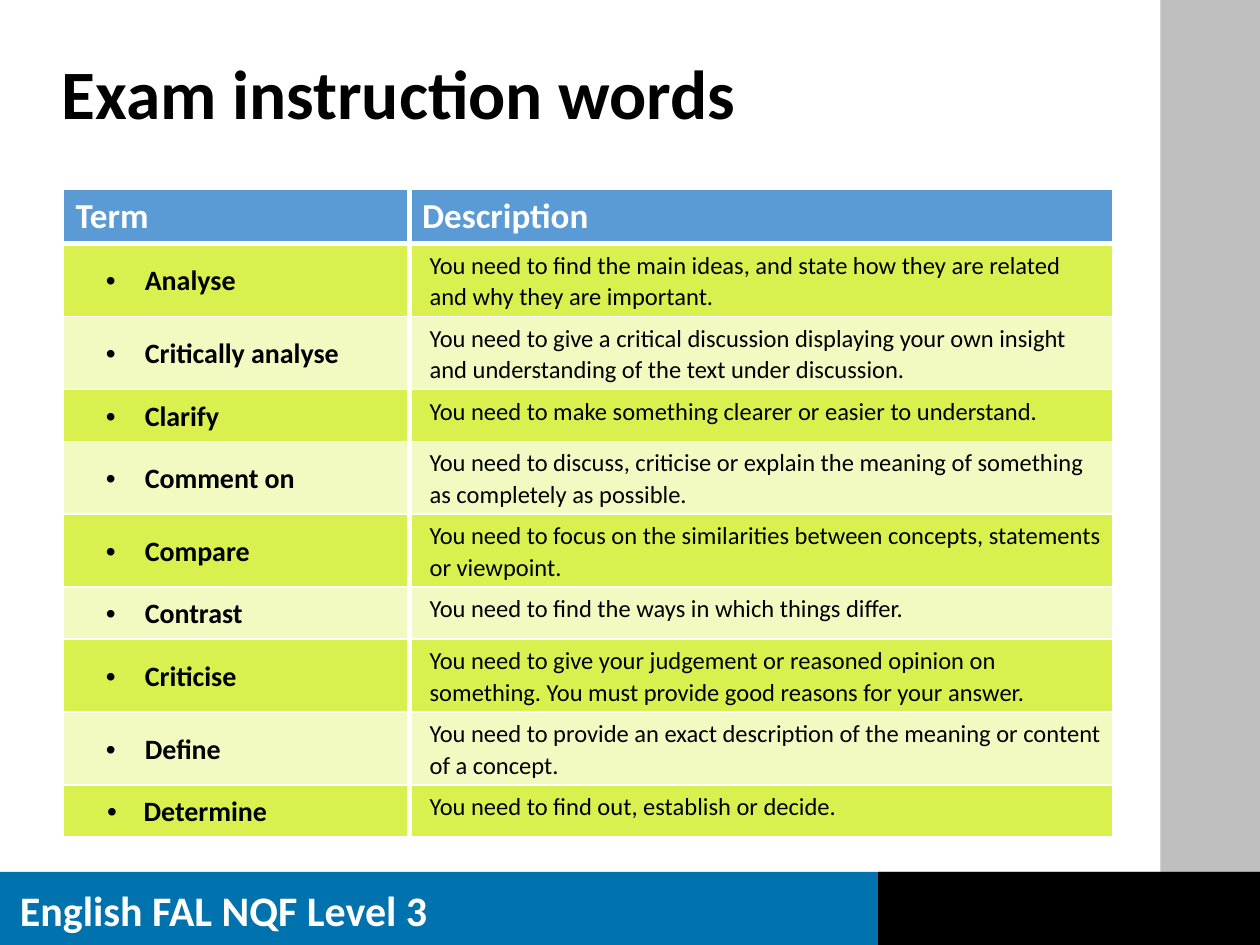
from lxml.etree import SubElement
from pptx import Presentation
from pptx.dml.color import RGBColor
from pptx.enum.shapes import MSO_SHAPE as Shape
from pptx.enum.text import MSO_ANCHOR as Anchor
from pptx.oxml.ns import qn
from pptx.util import Inches, Pt

FONT = "Calibri"
BLACK = RGBColor(0x00, 0x00, 0x00)
WHITE = RGBColor(0xFF, 0xFF, 0xFF)
GRAY = RGBColor(0xBF, 0xBF, 0xBF)
FOOTER_BLUE = RGBColor(0x00, 0x72, 0xAE)
HEADER_BLUE = RGBColor(0x5B, 0x9B, 0xD5)
LIME = RGBColor(0xDA, 0xF0, 0x4F)
PALE_LIME = RGBColor(0xF2, 0xFA, 0xC2)

TITLE = "Exam instruction words"
FOOTER = "English FAL NQF Level 3"
HEADERS = ("Term", "Description")
TERMS = [
    ("Analyse", "You need to find the main ideas, and state how they are related and why they are important."),
    ("Critically analyse", "You need to give a critical discussion displaying your own insight and understanding of the text under discussion."),
    ("Clarify", "You need to make something clearer or easier to understand."),
    ("Comment on", "You need to discuss, criticise or explain the meaning of something as completely as possible."),
    ("Compare", "You need to focus on the similarities between concepts, statements or viewpoint."),
    ("Contrast", "You need to find the ways in which things differ."),
    ("Criticise", "You need to give your judgement or reasoned opinion on something. You must provide good reasons for your answer."),
    ("Define", "You need to provide an exact description of the meaning or content of a concept."),
    ("Determine", "You need to find out, establish or decide."),
]
PANELS = [
    ((9.21, 0, 0.79, 7.49), GRAY),
    ((0, 6.92, 10, 0.58), FOOTER_BLUE),
    ((6.97, 6.92, 3.03, 0.58), BLACK),
]
COLUMN_WIDTHS = (2.75, 5.58)
HEADER_HEIGHT, ROW_HEIGHT = 0.24, 0.41
CELL_MARGINS = (0.1, 0.05, 0.1, 0.05)
TERM_MARGINS = (0.07, 0, 0.07, 0)
DESCRIPTION_MARGINS = (0.16, 0.04, 0.08, 0.04)
LAST_MARGINS = (0.16, 0.04, 0, 0.04)


def set_font(paragraph, size, color, bold):
    font = paragraph.font
    font.name, font.size, font.bold = FONT, Pt(size), bold
    font.color.rgb = color


def add_text(slide, box, text, size, color, margins):
    frame = slide.shapes.add_textbox(*map(Inches, box)).text_frame
    frame.word_wrap = True
    frame.margin_left, frame.margin_top = map(Inches, margins)
    paragraph = frame.paragraphs[0]
    paragraph.text = text
    set_font(paragraph, size, color, True)
    return paragraph


def add_borders(cell, left, right, top, bottom):
    properties = cell._tc.get_or_add_tcPr()
    for side, width in zip("LRTB", (left, right, top, bottom)):
        line = SubElement(properties, qn(f"a:ln{side}"), w=str(Pt(width)))
        fill = SubElement(line, qn("a:solidFill"))
        SubElement(fill, qn("a:srgbClr"), val=str(WHITE))


def add_bullet(paragraph, margin, indent):
    properties = paragraph._p.get_or_add_pPr()
    properties.set("marL", str(Inches(margin)))
    properties.set("indent", str(Inches(indent)))
    SubElement(properties, qn("a:buFont"), typeface="Arial")
    SubElement(properties, qn("a:buChar"), char="•")


def fill_cell(cell, text, color, margins):
    cell.fill.solid()
    cell.fill.fore_color.rgb = color
    cell.margin_left, cell.margin_top, cell.margin_right, cell.margin_bottom = map(Inches, margins)
    paragraph = cell.text_frame.paragraphs[0]
    paragraph.text = text
    return paragraph


def add_terms_table(slide):
    height = HEADER_HEIGHT + ROW_HEIGHT * len(TERMS)
    table = slide.shapes.add_table(
        len(TERMS) + 1, 2, Inches(0.5), Inches(1.5), Inches(sum(COLUMN_WIDTHS)), Inches(height)
    ).table
    for column, width in zip(table.columns, COLUMN_WIDTHS):
        column.width = Inches(width)
    for index, row in enumerate(table.rows):
        row.height = Inches(ROW_HEIGHT if index else HEADER_HEIGHT)
        top, bottom = 3 if index == 1 else 1, 1 if index else 3
        add_borders(row.cells[0], 1, 3, top, bottom)
        add_borders(row.cells[1], 3, 1, top, bottom)

    for column, header in enumerate(HEADERS):
        paragraph = fill_cell(table.cell(0, column), header, HEADER_BLUE, CELL_MARGINS)
        set_font(paragraph, 20, WHITE, True)

    for row, (term, description) in enumerate(TERMS, start=1):
        last = row == len(TERMS)
        color = LIME if row % 2 else PALE_LIME
        term_cell = table.cell(row, 0)
        term_cell.vertical_anchor = Anchor.MIDDLE
        paragraph = fill_cell(term_cell, term, color, LAST_MARGINS if last else TERM_MARGINS)
        paragraph.line_spacing = 1.07
        add_bullet(paragraph, *((0.48, -0.29) if last else (0.58, -0.31)))
        set_font(paragraph, 16, BLACK, True)

        margins = LAST_MARGINS if last else DESCRIPTION_MARGINS
        paragraph = fill_cell(table.cell(row, 1), description, color, margins)
        paragraph.line_spacing = 1.07
        set_font(paragraph, 14, BLACK, False)


def main():
    presentation = Presentation()
    presentation.slide_width, presentation.slide_height = Inches(10), Inches(7.5)
    slide = presentation.slides.add_slide(presentation.slide_layouts[6])
    for box, color in PANELS:
        panel = slide.shapes.add_shape(Shape.RECTANGLE, *map(Inches, box))
        panel.shadow.inherit = False
        panel.fill.solid()
        panel.fill.fore_color.rgb = color
        panel.line.fill.background()
    add_text(slide, (0.06, 6.97, 3.75, 0.5), FOOTER, 24, WHITE, (0.1, 0.05))
    title = add_text(slide, (0.42, 0.4, 8.65, 0.79), TITLE, 39.6, BLACK, (0.07, 0.07))
    title.line_spacing = 0.9
    add_terms_table(slide)
    presentation.save("out.pptx")


if __name__ == "__main__":
    main()
